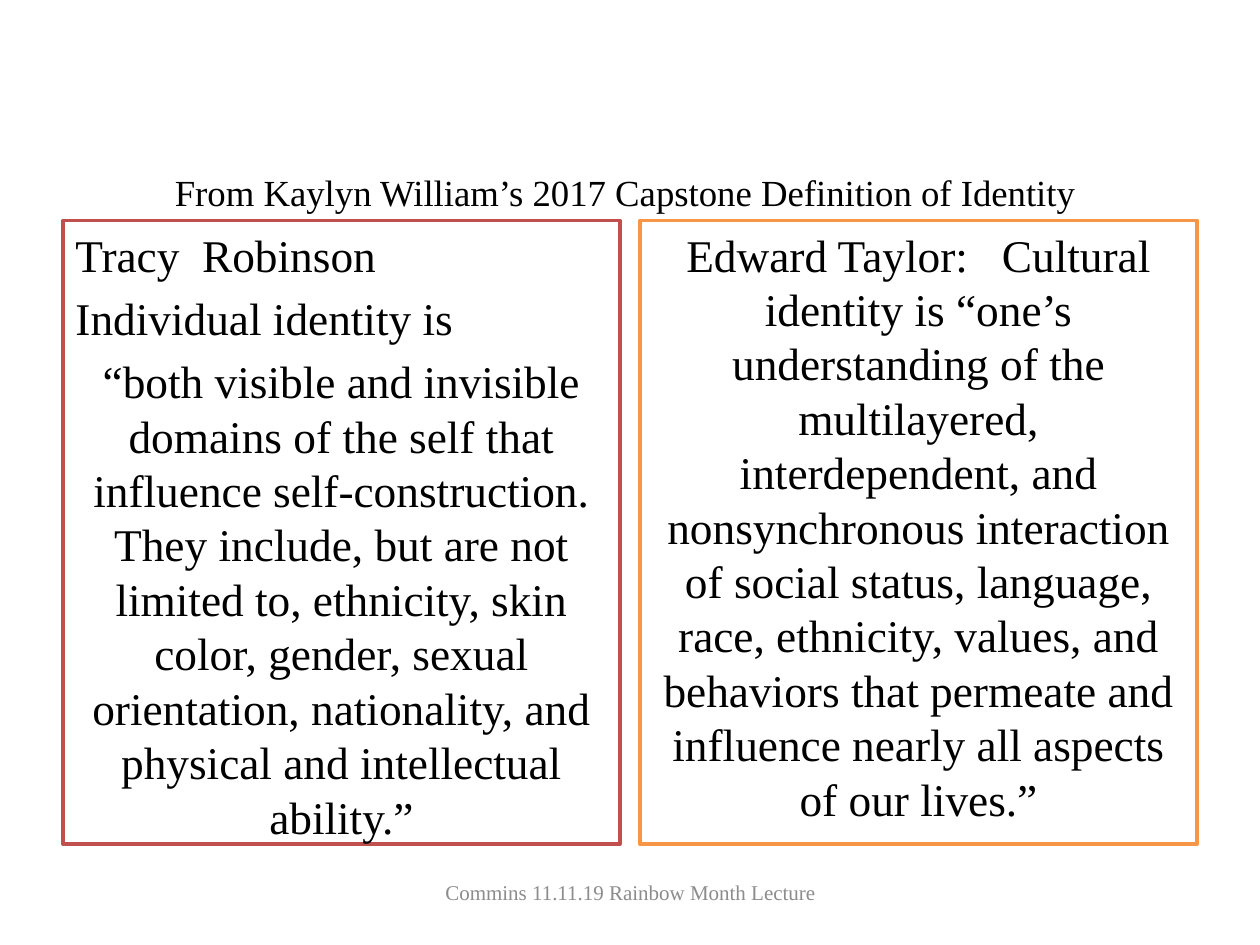
from pptx import Presentation
from pptx.dml.color import RGBColor
from pptx.enum.shapes import MSO_SHAPE
from pptx.enum.text import MSO_ANCHOR, PP_ALIGN
from pptx.util import Inches, Pt

RECTANGLE = MSO_SHAPE.RECTANGLE
TOP, MIDDLE = MSO_ANCHOR.TOP, MSO_ANCHOR.MIDDLE
LEFT, CENTER = PP_ALIGN.LEFT, PP_ALIGN.CENTER

THEME = {
    "font": "Times New Roman",
    "title": (21, "000000"),
    "body": (25.9, "000000"),
    "footer": (12, "8C8C8C"),
    "panel": "FFFFFF",
    "individual": "C0504D",
    "cultural": "F79646",
}

TITLE = "From Kaylyn William’s 2017 Capstone Definition of Identity "
FOOTER = "Commins 11.11.19 Rainbow Month Lecture"
DEFINITIONS = [
    ("individual", [
        ("Tracy  Robinson", LEFT),
        ("Individual identity is", LEFT),
        ("“both visible and invisible domains of the self that influence "
         "self-construction. They include, but are not limited to, ethnicity, "
         "skin color, gender, sexual orientation, nationality, and physical "
         "and intellectual ability.”", CENTER),
    ]),
    ("cultural", [
        ("Edward Taylor:   Cultural identity is “one’s understanding of the "
         "multilayered, interdependent, and nonsynchronous interaction of "
         "social status, language, race, ethnicity, values, and behaviors "
         "that permeate and influence nearly all aspects of our lives.”", CENTER),
    ]),
]

MARGIN, PANEL_TOP, PANEL_WIDTH, PANEL_HEIGHT, GAP = 0.5, 1.75, 4.42, 4.95, 0.16
PARAGRAPH_GAP = 5.1


def write(shape, paragraphs, style, anchor):
    size, color = THEME[style]
    frame = shape.text_frame
    frame.word_wrap = True
    frame.vertical_anchor = anchor
    for index, (text, alignment) in enumerate(paragraphs):
        paragraph = frame.paragraphs[0] if index == 0 else frame.add_paragraph()
        paragraph.text = text
        paragraph.alignment = alignment
        paragraph.space_before = Pt(PARAGRAPH_GAP if index else 0)
        paragraph.font.name = THEME["font"]
        paragraph.font.size = Pt(size)
        paragraph.font.color.rgb = RGBColor.from_string(color)


def add_caption(slide, text, style, box):
    caption = slide.shapes.add_textbox(*map(Inches, box))
    write(caption, [(text, CENTER)], style, MIDDLE)


def add_panel(slide, column, outline, paragraphs):
    left = MARGIN + column * (PANEL_WIDTH + GAP)
    panel = slide.shapes.add_shape(
        RECTANGLE, *map(Inches, (left, PANEL_TOP, PANEL_WIDTH, PANEL_HEIGHT)))
    panel.shadow.inherit = False
    panel.fill.solid()
    panel.fill.fore_color.rgb = RGBColor.from_string(THEME["panel"])
    panel.line.color.rgb = RGBColor.from_string(THEME[outline])
    panel.line.width = Pt(2)
    write(panel, paragraphs, "body", TOP)


def main():
    deck = Presentation()
    deck.slide_width, deck.slide_height = Inches(10), Inches(7.5)
    slide = deck.slides.add_slide(deck.slide_layouts[6])
    add_caption(slide, TITLE, "title", (MARGIN, 1.17, 9, 0.7))
    for column, (outline, paragraphs) in enumerate(DEFINITIONS):
        add_panel(slide, column, outline, paragraphs)
    add_caption(slide, FOOTER, "footer", (3.42, 6.95, 3.17, 0.26))
    deck.save("out.pptx")


if __name__ == "__main__":
    main()
